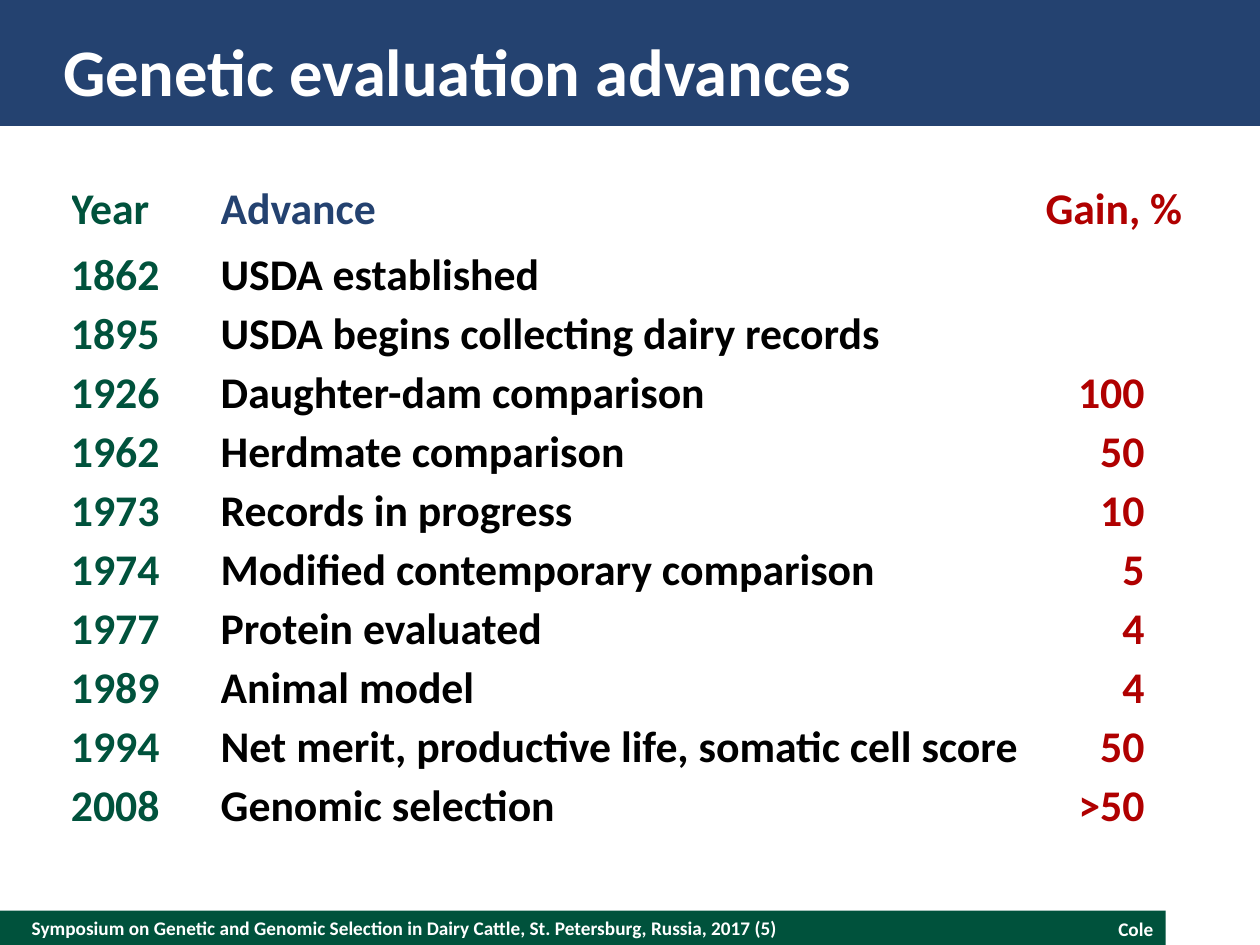
"""Build a slide listing the advances in genetic evaluation of dairy cattle."""
from dataclasses import dataclass

from pptx import Presentation
from pptx.dml.color import RGBColor
from pptx.enum.shapes import MSO_SHAPE
from pptx.enum.text import MSO_ANCHOR, MSO_AUTO_SIZE, PP_ALIGN
from pptx.slide import Slide
from pptx.table import _Cell
from pptx.text.text import TextFrame
from pptx.util import Cm, Pt

LEFT, RIGHT = PP_ALIGN.LEFT, PP_ALIGN.RIGHT
TOP, MIDDLE = MSO_ANCHOR.TOP, MSO_ANCHOR.MIDDLE
NO_AUTOFIT = MSO_AUTO_SIZE.NONE
RECTANGLE = MSO_SHAPE.RECTANGLE

FONT = "Calibri"
COLORS = {
    "green": "00523C",
    "blue": "244270",
    "red": "B00000",
    "black": "000000",
    "white": "FFFFFF",
}


@dataclass
class Area:
    left: float
    top: float
    width: float
    height: float

    def lengths(self) -> tuple[Cm, Cm, Cm, Cm]:
        return Cm(self.left), Cm(self.top), Cm(self.width), Cm(self.height)


@dataclass
class Column:
    heading: str
    width: float
    heading_color: str
    color: str
    align: PP_ALIGN = LEFT
    right_inset: float = 0


@dataclass
class Advance:
    year: str
    name: str
    gain: str = ""


COLUMNS = [
    Column("Year", 3.02, "green", "green"),
    Column("Advance", 16.43, "blue", "black"),
    Column("Gain, %", 2.95, "red", "red", RIGHT, 0.76),
]
ADVANCES = [
    Advance("1862", "USDA established"),
    Advance("1895", "USDA begins collecting dairy records"),
    Advance("1926", "Daughter-dam comparison", "100"),
    Advance("1962", "Herdmate comparison", "50"),
    Advance("1973", "Records in progress", "10"),
    Advance("1974", "Modified contemporary comparison", "5"),
    Advance("1977", "Protein evaluated", "4"),
    Advance("1989", "Animal model", "4"),
    Advance("1994", "Net merit, productive life, somatic cell score", "50"),
    Advance("2008", "Genomic selection", ">50"),
]
HEADING_HEIGHT, ROW_HEIGHT = 1.25, 1.19


def write(frame: TextFrame, text: str, size: float, color: str,
          align: PP_ALIGN = LEFT) -> None:
    frame.text = text
    para = frame.paragraphs[0]
    para.alignment = align
    para.font.name = FONT
    para.font.size = Pt(size)
    para.font.bold = True
    para.font.color.rgb = RGBColor.from_string(COLORS[color])


def set_insets(target: TextFrame | _Cell, right: float = 0, bottom: float = 0) -> None:
    target.margin_left = target.margin_top = 0
    target.margin_right, target.margin_bottom = Cm(right), Cm(bottom)


def add_band(page: Slide, area: Area, color: str) -> None:
    band = page.shapes.add_shape(RECTANGLE, *area.lengths())
    band.shadow.inherit = False
    band.fill.solid()
    band.fill.fore_color.rgb = RGBColor.from_string(COLORS[color])
    band.line.fill.background()
    page.shapes.title.element.addprevious(band.element)


def add_footer(page: Slide, area: Area, text: str, align: PP_ALIGN = LEFT,
               right_inset: float = 0) -> None:
    frame = page.shapes.add_textbox(*area.lengths()).text_frame
    frame.word_wrap = True
    frame.vertical_anchor = MIDDLE
    set_insets(frame, right_inset)
    write(frame, text, 11, "white", align)


def place_title(page: Slide, area: Area, text: str) -> None:
    title = page.shapes.title
    title.left, title.top, title.width, title.height = area.lengths()
    frame = title.text_frame
    frame.auto_size = NO_AUTOFIT
    frame.vertical_anchor = MIDDLE
    set_insets(frame)
    write(frame, text, 38, "white")


def fill_cell(cell: _Cell, text: str, color: str, align: PP_ALIGN,
              spacing: float, right: float = 0, bottom: float = 0) -> None:
    cell.fill.background()
    cell.vertical_anchor = TOP
    set_insets(cell, right, bottom)
    write(cell.text_frame, text, 25, color, align)
    cell.text_frame.paragraphs[0].line_spacing = Pt(spacing)


def add_advances(page: Slide, left: float, top: float) -> None:
    area = Area(left, top, sum(column.width for column in COLUMNS),
                HEADING_HEIGHT + ROW_HEIGHT * len(ADVANCES))
    table = page.shapes.add_table(
        len(ADVANCES) + 1, len(COLUMNS), *area.lengths()).table
    table.first_row = table.horz_banding = False
    for row in table.rows:
        row.height = Cm(ROW_HEIGHT)
    table.rows[0].height = Cm(HEADING_HEIGHT)
    for index, column in enumerate(COLUMNS):
        table.columns[index].width = Cm(column.width)
        fill_cell(table.cell(0, index), column.heading, column.heading_color,
                  column.align, 28)
    for number, advance in enumerate(ADVANCES, 1):
        values = (advance.year, advance.name, advance.gain)
        for index, (column, value) in enumerate(zip(COLUMNS, values)):
            fill_cell(table.cell(number, index), value, column.color,
                      column.align, 30, column.right_inset, 0.13)


def main() -> None:
    deck = Presentation()
    deck.slide_width, deck.slide_height = Cm(25.4), Cm(19.05)
    page = deck.slides.add_slide(deck.slide_layouts.get_by_name("Title Only"))
    add_band(page, Area(0, 18.36, 23.5, 0.69), "green")
    add_band(page, Area(0, 0, 25.4, 2.54), "blue")
    add_footer(page, Area(0.64, 18.36, 16.51, 0.69),
               "Symposium on Genetic and Genomic Selection in Dairy Cattle, "
               "St. Petersburg, Russia, 2017 (5)")
    add_footer(page, Area(18.42, 18.36, 5.08, 0.73), "Cole", RIGHT, 0.25)
    place_title(page, Area(1.27, 0.51, 22.86, 1.78), "Genetic evaluation advances")
    add_advances(page, 1.43, 3.78)
    deck.save("out.pptx")


if __name__ == "__main__":
    main()
